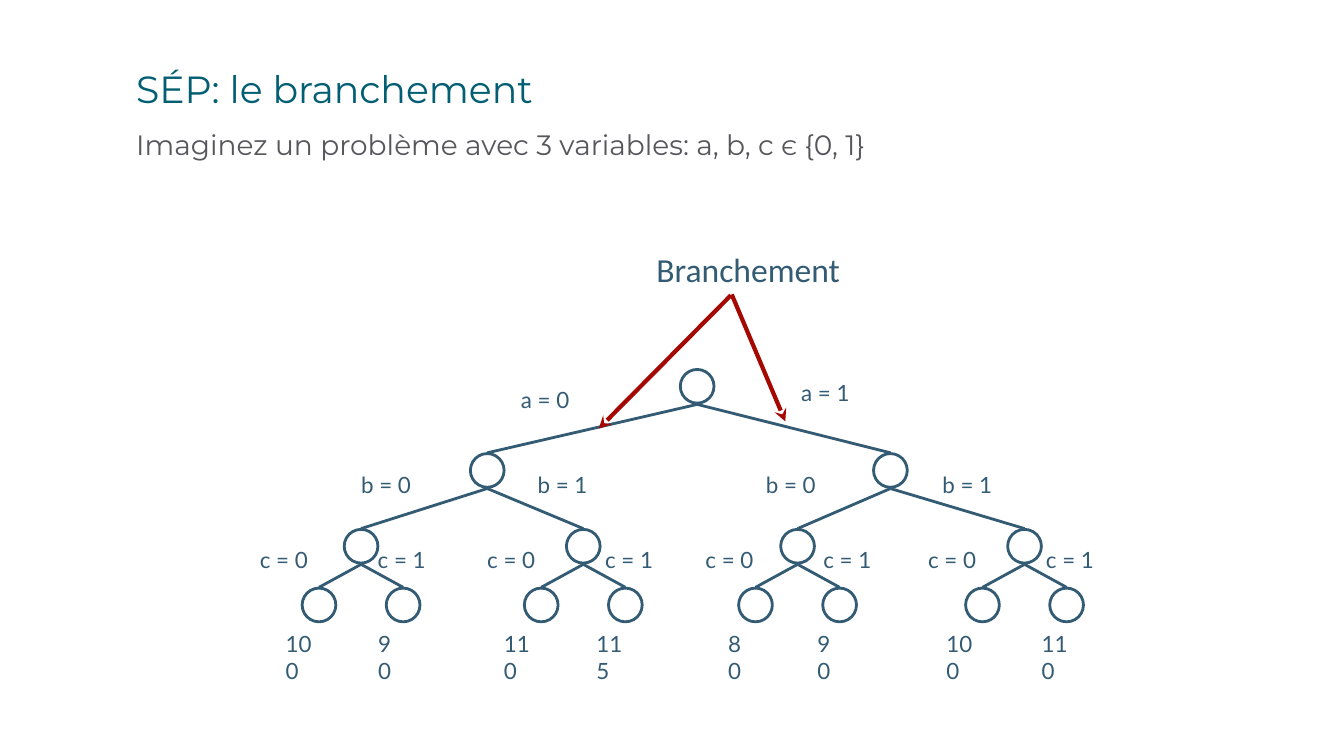
from dataclasses import dataclass

from lxml import etree
from pptx import Presentation
from pptx import util as u
from pptx.dml.color import RGBColor
from pptx.enum import shapes, text
from pptx.oxml.ns import qn


@dataclass(frozen=True)
class Font:
    name: str
    size: float
    color: str


@dataclass(frozen=True)
class Theme:
    title: Font = Font("Montserrat", 27, "025E73")
    body: Font = Font("Montserrat", 20, "57565B")
    tag: Font = Font("Lato", 16, "335B74")
    note: Font = Font("Calibri", 24, "335B74")
    tree: str = "335B74"
    arrow: str = "A40800"


@dataclass(frozen=True)
class Tag:
    text: str
    x: float
    y: float
    width: float = 1.4


@dataclass(frozen=True)
class Level:
    """One row of circles: its top edge, the circle centres and the branch tags."""
    top: float
    mids: list[float]
    tags: list[Tag]


THEME = Theme()
SIZE = 0.85   # circle diameter, cm
DROP = 0.88   # from a circle's top to where its branches start
FORK = 1.06   # sideways reach of a last branch
TAG_B, TAG_C, LEAF = 11.86, 13.77, 15.88

B_MIDS = [9.1, 14.7, 20.1, 25.82]
C_MIDS = [mid + side * FORK for mid in B_MIDS for side in (-1, 1)]
LEVELS = [
    Level(9.31, [17.57], []),
    Level(11.43, [12.28, 22.44],
          [Tag("a = 0", 13.13, 9.73), Tag("a = 1", 20.19, 9.55)]),
    Level(13.34, B_MIDS,
          [Tag(f"b = {bit}", x + bit * 4.45, TAG_B)
           for x in (9.1, 19.3) for bit in (0, 1)]),
    Level(14.82, C_MIDS,
          [Tag(f"c = {bit}", x + bit * 2.97, TAG_C)
           for x in (6.55, 12.28, 17.78, 23.39) for bit in (0, 1)]),
]
COSTS = [("100", 7.2), ("90", 9.53), ("110", 12.7), ("115", 15.03),
         ("80", 18.35), ("90", 20.6), ("100", 23.85), ("110", 26.25)]
ARROWS = [((15.09, 10.8), (18.42, 7.44)), ((19.79, 10.62), (18.44, 7.42))]


def write(slide, words: str, font: Font, x: float, y: float, width: float,
          height: float, pad: tuple[float, float] = (0, 0),
          pitch: float | None = None) -> None:
    """Add a text box; pad is the side and top inset, pitch the line spacing."""
    box = slide.shapes.add_textbox(u.Cm(x), u.Cm(y), u.Cm(width), u.Cm(height))
    frame = box.text_frame
    frame.word_wrap = True
    frame.vertical_anchor = text.MSO_ANCHOR.TOP
    frame.margin_left = frame.margin_right = u.Cm(pad[0])
    frame.margin_top = frame.margin_bottom = u.Cm(pad[1])
    para = frame.paragraphs[0]
    if pitch:
        para.line_spacing = pitch
    run = para.add_run()
    run.text = words
    run.font.name = font.name
    run.font.size = u.Pt(font.size)
    run.font.color.rgb = RGBColor.from_string(font.color)


def stroke(shape, color: str, width: float) -> None:
    shape.line.color.rgb = RGBColor.from_string(color)
    shape.line.width = u.Pt(width)


def link(slide, start: tuple[float, float], end: tuple[float, float],
         color: str, width: float, head: bool = False) -> None:
    """Add a straight line, with an arrowhead at its start if head is set."""
    line = slide.shapes.add_connector(
        shapes.MSO_CONNECTOR.STRAIGHT, *(u.Cm(n) for n in (*start, *end)))
    stroke(line, color, width)
    if head:
        etree.SubElement(line.line._get_or_add_ln(), qn("a:headEnd"),
                         type="stealth")
    etree.SubElement(line._element.spPr, qn("a:effectLst"))


def circle(slide, mid: float, top: float) -> None:
    ring = slide.shapes.add_shape(
        shapes.MSO_SHAPE.OVAL, u.Cm(mid - SIZE / 2), u.Cm(top),
        u.Cm(SIZE), u.Cm(SIZE))
    ring.shadow.inherit = False
    ring.fill.background()
    stroke(ring, THEME.tree, 2)


def tree(slide) -> None:
    for depth, level in enumerate(LEVELS):
        for spot, mid in enumerate(level.mids):
            circle(slide, mid, level.top)
            if depth:
                above = LEVELS[depth - 1]
                link(slide, (above.mids[spot // 2], above.top + DROP),
                     (mid, level.top - 0.02), THEME.tree, 2)
        for tag in level.tags:
            write(slide, tag.text, THEME.tag, tag.x, tag.y, tag.width, 0.68)


def main() -> None:
    deck = Presentation()
    deck.slide_width, deck.slide_height = u.Cm(33.87), u.Cm(19.05)
    slide = deck.slides.add_slide(deck.slide_layouts[6])

    write(slide, "SÉP: le branchement", THEME.title,
          3.18, 1.65, 29.21, 1.9, (0.25, 0.13), 0.9)
    write(slide, "Imaginez un problème avec 3 variables: a, b, c є {0, 1}",
          THEME.body, 3.18, 3.05, 29.21, 1.27, (0.25, 0.25), 0.9)
    tree(slide)
    for cost, x in COSTS:
        width = 0.94 if len(cost) == 3 else 0.63
        write(slide, cost, THEME.tag, x, LEAF, width, 0.68)
    write(slide, "Branchement", THEME.note, 16.54, 6.27, 4.8, 1.02)
    for tip, root in ARROWS:
        link(slide, tip, root, THEME.arrow, 3, head=True)

    deck.save("out.pptx")


if __name__ == "__main__":
    main()
